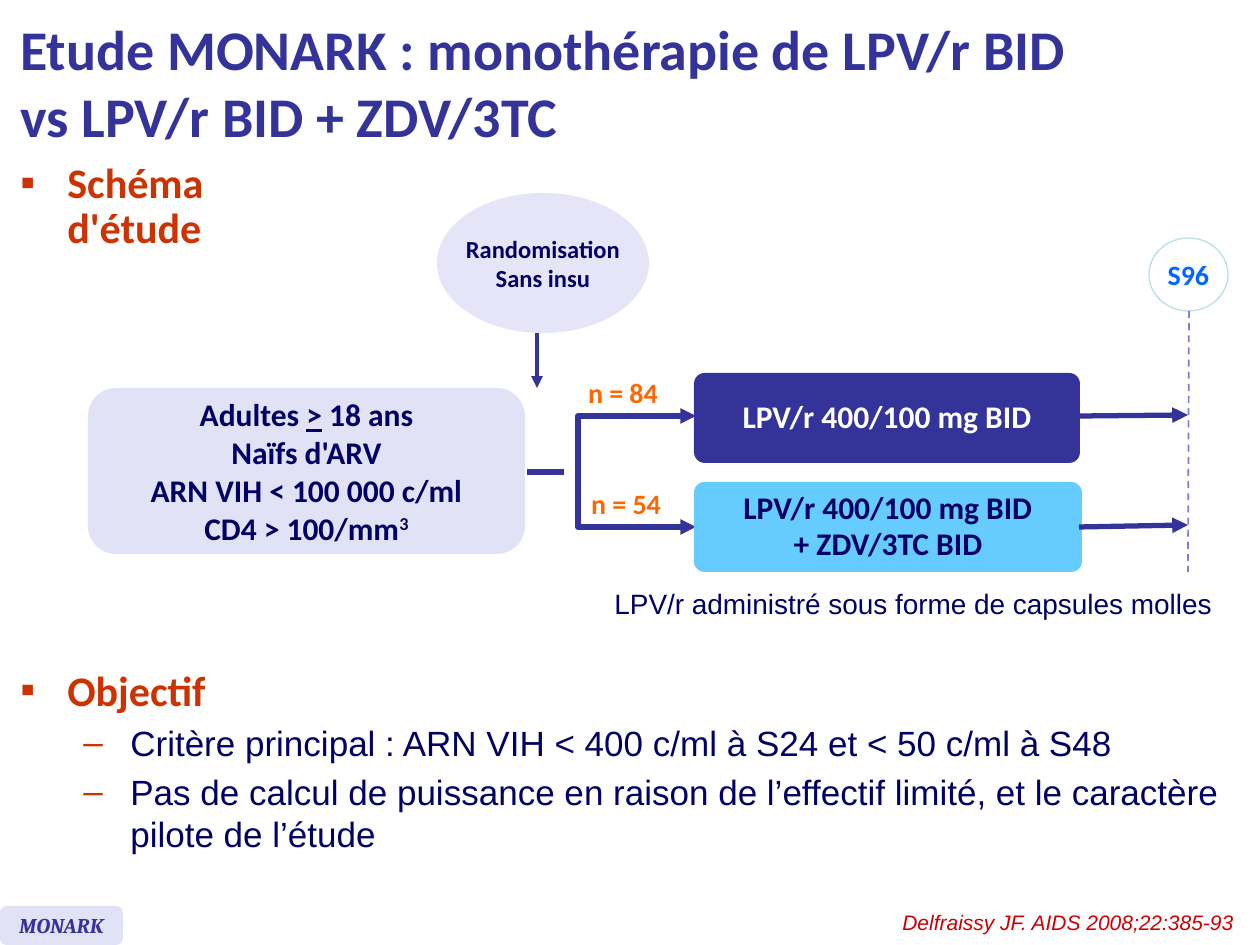
import pptx
import pptx.util
import pptx.dml.color
import pptx.enum.dml
import pptx.enum.shapes
import pptx.enum.text
import pptx.oxml

PX = 914400 / 126
NAVY, BLUE, RED, PALE = "000066", "333399", "CC3300", "E2E2F6"
ORANGE = "FF6600"
KIND = pptx.enum.shapes.MSO_SHAPE
ALIGN = pptx.enum.text.PP_ALIGN
ANCHOR = pptx.enum.text.MSO_ANCHOR

# Fonts: name, size, colour, bold, italic
TITLE = ("Calibri", 32, BLUE, True, False)
HEAD = ("Calibri", 24, RED, True, False)
BODY = ("Arial", 20, NAVY, False, False)
NOTE = ("Arial", 16, NAVY, False, False)
CITE = ("Arial", 12, "CC0000", False, True)
TAG = ("Cambria", 12, BLUE, True, True)
COUNT = ("Calibri", 16, ORANGE, True, False)
STAGE = ("Calibri", 14, NAVY, True, False)
WEEK = ("Calibri", 16, "0066FF", True, False)
GROUP = ("Calibri", 18, NAVY, True, False)
ARM = ("Calibri", 18, "FFFFFF", True, False)

# A line of text is a string or a list of (text, run style)
CRITERIA = [
    [("Adultes ", ""), (">", "under"), (" 18 ans", "")],
    "Naïfs d'ARV",
    "ARN VIH < 100 000 c/ml",
    [("CD4 > 100/mm", ""), ("3", "super")],
]
GOALS = [
    "Critère principal : ARN VIH < 400 c/ml à S24 et < 50 c/ml à S48",
    "Pas de calcul de puissance en raison de l’effectif limité, "
    "et le caractère pilote de l’étude",
]

# Plain labels: box, text, font, alignment
LABELS = [
    ((890, 903, 359, 38), "Delfraissy JF. AIDS 2008;22:385-93", CITE, ALIGN.LEFT),
    ((602, 580, 625, 47), "LPV/r administré sous forme de capsules molles", NOTE, ALIGN.LEFT),
    ((578, 480, 96, 47), "n = 54", COUNT, ALIGN.CENTER),
    ((572, 369, 102, 47), "n = 84", COUNT, ALIGN.CENTER),
]

# Shapes: kind, box, corner, fill, outline, lines, font, line spacing
SHAPES = [
    (KIND.ROUNDED_RECTANGLE, (0, 906, 123, 39), 0.17, PALE, None, ["MONARK"], TAG, 1),
    (KIND.ROUNDED_RECTANGLE, (88, 388, 437, 166), 0.17, PALE, None, CRITERIA, GROUP, 1),
    (KIND.OVAL, (437, 193, 212, 140), None, "E5E5F7", None,
     ["Randomisation", "Sans insu"], STAGE, 1),
    (KIND.ROUNDED_RECTANGLE, (694, 373, 386, 90), 0.12, BLUE, None,
     ["LPV/r 400/100 mg BID"], ARM, 0.95),
    (KIND.ROUNDED_RECTANGLE, (694, 482, 388, 90), 0.12, "66CCFF", None,
     ["LPV/r 400/100 mg BID", "+ ZDV/3TC BID"], GROUP, 0.95),
    (KIND.OVAL, (1149, 238, 79, 73), None, "FFFFFF", "BBE0E3", ["S96"], WEEK, 1),
]

# Lines: from, to, colour, width, dashed, arrow
LINES = [
    ((537, 333), (537, 388), BLUE, 2.25, False, True),
    ((527, 472), (564, 472), BLUE, 3, False, False),
    ((1079, 416), (1188, 415), BLUE, 3, False, True),
    ((1079, 527), (1188, 525), BLUE, 3, False, True),
    ((1189, 311), (1188, 572), "7E7ED4", 1, True, False),
]
FORK = [(696, 416), (578, 416), (578, 527), (696, 527)]


def emu(px):
    return round(px * PX)


def scale(box):
    return [emu(v) for v in box]


def rgb(code):
    return pptx.dml.color.RGBColor.from_string(code)


def add_xml(parent, tag, **attrs):
    node = pptx.oxml.parse_xml(
        f'<a:{tag} xmlns:a="http://schemas.openxmlformats.org/drawingml/2006/main"/>')
    for key, val in attrs.items():
        node.set(key, val)
    parent.append(node)
    return node


def style(par, look):
    font = par.font
    font.name, size, color, font.bold, font.italic = look
    font.size = pptx.util.Pt(size)
    font.color.rgb = rgb(color)


def write(par, text, look, align=ALIGN.LEFT, space=1):
    par.alignment, par.line_spacing = align, space
    if isinstance(text, str):
        par.text = text
    else:
        for part, mark in text:
            run = par.add_run()
            run.text = part
            if mark == "under":
                run.font.underline = True
            elif mark == "super":
                run.font._element.set("baseline", "30000")
    style(par, look)


def bullet(par, mark, left):
    props = par._p.get_or_add_pPr()
    props.set("marL", str(emu(left)))
    props.set("indent", str(emu(-47)))
    color = add_xml(props, "buClr")
    add_xml(color, "srgbClr", val=RED)
    add_xml(props, "buFont", typeface="Arial")
    add_xml(props, "buChar", char=mark)


def add_box(box, wrap=True):
    frame = slide.shapes.add_textbox(*scale(box)).text_frame
    frame.word_wrap = wrap
    return frame


def add_list(box, head, items, space=1):
    frame = add_box(box)
    par = frame.paragraphs[0]
    par.line_spacing = space
    bullet(par, "▪", 47)
    write(par, head, HEAD, space=space)
    for item in items:
        par = frame.add_paragraph()
        par.level = 1
        par.line_spacing = space
        par.space_before = pptx.util.Pt(4)
        bullet(par, "–", 110)
        write(par, item, BODY, space=space)


def add_shape(kind, box, corner, fill, edge, lines, look, space):
    shape = slide.shapes.add_shape(kind, *scale(box))
    shape.shadow.inherit = False
    if corner:
        shape.adjustments[0] = corner
    shape.fill.solid()
    shape.fill.fore_color.rgb = rgb(fill)
    if edge:
        shape.line.color.rgb = rgb(edge)
        shape.line.width = pptx.util.Pt(0.75)
    else:
        shape.line.fill.background()
    frame = shape.text_frame
    frame.word_wrap, frame.vertical_anchor = False, ANCHOR.MIDDLE
    for i, text in enumerate(lines):
        par = frame.add_paragraph() if i else frame.paragraphs[0]
        write(par, text, look, ALIGN.CENTER, space)


def stroke(line, color, width, ends=()):
    line.color.rgb = rgb(color)
    line.width = pptx.util.Pt(width)
    for end in ends:
        add_xml(line._get_or_add_ln(), end, type="triangle")


def add_line(start, end, color, width, dash, arrow):
    line = slide.shapes.add_connector(
        pptx.enum.shapes.MSO_CONNECTOR.STRAIGHT, *scale(start + end))
    if dash:
        line.line.dash_style = pptx.enum.dml.MSO_LINE.DASH
    stroke(line.line, color, width, ["tailEnd"] if arrow else [])
    add_xml(line._element.spPr, "effectLst")


deck = pptx.Presentation()
deck.slide_width, deck.slide_height = emu(1260), emu(945)
slide = deck.slides.add_slide(deck.slide_layouts[6])

# Title and lists
title = add_box((8, 6, 1242, 152))
title.vertical_anchor = ANCHOR.MIDDLE
write(title.paragraphs[0],
      "Etude MONARK : monothérapie de LPV/r BID\vvs LPV/r BID + ZDV/3TC", TITLE)
add_list((8, 156, 236, 71), "Schéma d'étude", [], 0.9)
add_list((8, 658, 1225, 223), "Objectif", GOALS)

# Labels
for box, text, look, align in LABELS:
    write(add_box(box, False).paragraphs[0], text, look, align)

# Fork from the patients to both arms
path = slide.shapes.build_freeform(*FORK[0], scale=PX)
path.add_line_segments(FORK[1:], close=False)
fork = path.convert_to_shape()
fork.shadow.inherit = False
fork.fill.background()
stroke(fork.line, BLUE, 3, ["headEnd", "tailEnd"])

# Diagram
for item in SHAPES:
    add_shape(*item)
for item in LINES:
    add_line(*item)

deck.save("out.pptx")
